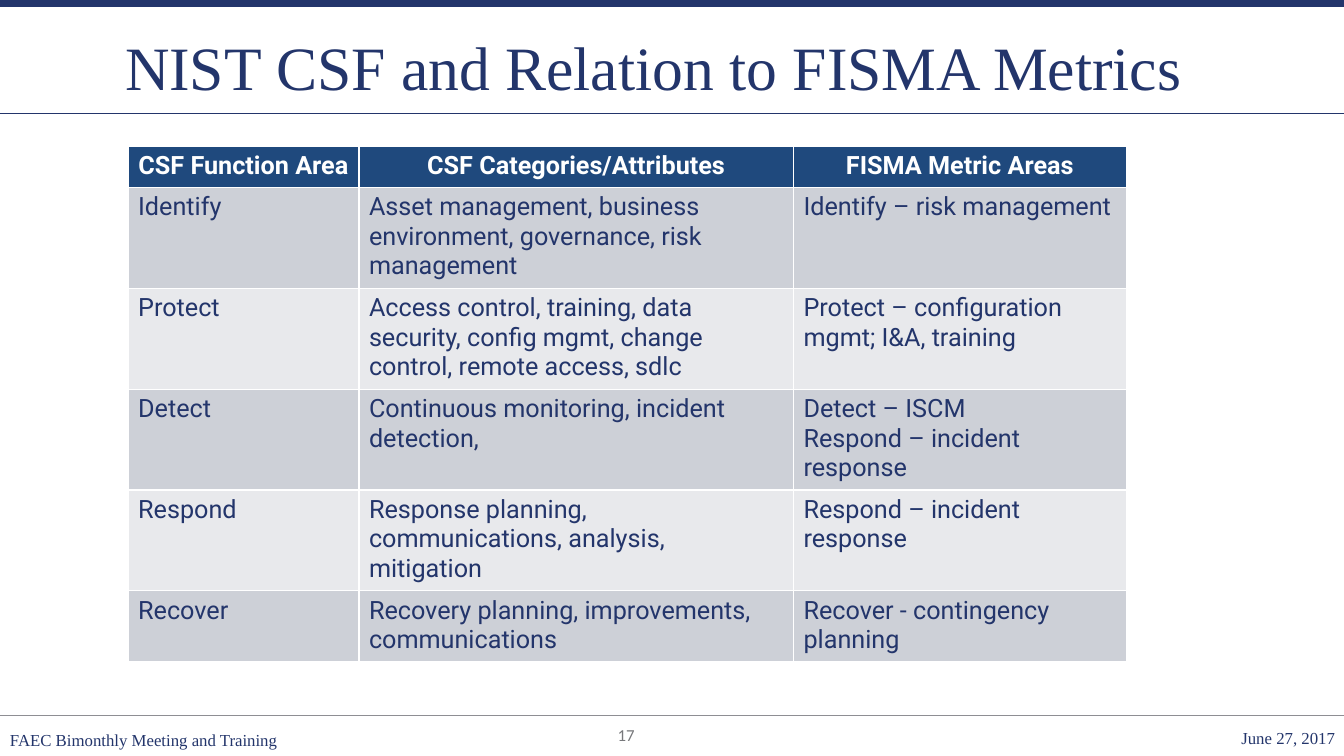
"""Build a slide that maps NIST CSF functions to FISMA metric areas."""
from dataclasses import dataclass

from pptx import Presentation
from pptx import util as u
from pptx.dml.color import RGBColor
from pptx.enum import shapes, text
from pptx.oxml import parse_xml
from pptx.oxml.ns import nsdecls

HUES = {"navy": "23356B", "head": "1F497D", "white": "FFFFFF", "gray": "77787B",
        "rule": "8E8E93", "dark": "CDD0D7", "light": "E8E9EC"}
LEFT, MID, RIGHT = text.PP_ALIGN.LEFT, text.PP_ALIGN.CENTER, text.PP_ALIGN.RIGHT
TOP, CENTER = text.MSO_ANCHOR.TOP, text.MSO_ANCHOR.MIDDLE
WIDE = 13.33


@dataclass
class Font:
    """A text style."""
    face: str
    size: float
    hue: str
    bold: bool = False


@dataclass
class Rule:
    """A line across the whole slide."""
    y: float
    hue: str
    width: float


@dataclass
class Note:
    """A small text in the footer."""
    words: str
    box: tuple[float, float, float, float]
    font: Font
    align: text.PP_ALIGN
    anchor: text.MSO_ANCHOR
    space: float = 0.9


SERIF = Font("Times New Roman", 12, "navy")
TITLE = Font("Times New Roman", 44, "navy")
HEAD = Font("Roboto", 18, "white", True)
BODY = Font("Roboto", 18, "navy")

RULES = [Rule(7.1, "rule", 0.75), Rule(0.03, "navy", 5), Rule(1.13, "navy", 0.75)]
NOTES = [
    Note("17", (5.22, 7.14, 1.98, 0.3), Font("Calibri", 12, "gray"), MID, CENTER, 1),
    Note("FAEC Bimonthly Meeting and Training", (0, 7.14, 3.85, 0.42), SERIF, LEFT, CENTER),
    Note("June 27, 2017", (10.95, 7.19, 2.39, 0.34), SERIF, RIGHT, TOP),
]
COLS = [2.29, 4.31, 3.3]
ROWS = [0.41, 0.98, 0.98, 0.98, 0.98, 0.68]
CELLS = [
    ("CSF Function Area", "CSF Categories/Attributes", "FISMA Metric Areas"),
    ("Identify", "Asset management, business environment, governance, risk management",
     "Identify – risk management"),
    ("Protect", "Access control, training, data security, config mgmt, change control, "
     "remote access, sdlc", "Protect – configuration mgmt; I&A, training"),
    ("Detect", "Continuous monitoring, incident detection,",
     "Detect – ISCM\nRespond – incident response"),
    ("Respond", "Response planning, communications, analysis, mitigation",
     "Respond – incident response"),
    ("Recover", "Recovery planning, improvements, communications",
     "Recover - contingency planning"),
]


def color(hue: str) -> RGBColor:
    """Return the named colour."""
    return RGBColor.from_string(HUES[hue])


def write(frame, words: str, font: Font, align: text.PP_ALIGN, space: float = 1) -> None:
    """Fill a text frame, one paragraph to each line of words."""
    for i, line in enumerate(words.split("\n")):
        para = frame.add_paragraph() if i else frame.paragraphs[0]
        para.alignment, para.line_spacing = align, space
        run = para.add_run()
        run.text = line
        run.font.name, run.font.size = font.face, u.Pt(font.size)
        run.font.bold = font.bold
        run.font.color.rgb = color(font.hue)


def draw_rule(slide, rule: Rule) -> None:
    """Draw a line from edge to edge."""
    y = u.Inches(rule.y)
    line = slide.shapes.add_connector(shapes.MSO_CONNECTOR.STRAIGHT, 0, y, u.Inches(WIDE), y)
    line.line.color.rgb = color(rule.hue)
    line.line.width = u.Pt(rule.width)
    line._element.spPr.append(parse_xml(f"<a:effectLst {nsdecls('a')}/>"))


def draw_note(slide, note: Note) -> None:
    """Add a footer text box."""
    frame = slide.shapes.add_textbox(*map(u.Inches, note.box)).text_frame
    frame.word_wrap = True
    frame.vertical_anchor = note.anchor
    write(frame, note.words, note.font, note.align, note.space)


def draw_title(slide, words: str) -> None:
    """Place and fill the title."""
    title = slide.shapes.title
    title.left, title.top, title.width, title.height = map(u.Inches, (0.38, 0.19, 12.21, 1.01))
    title.text_frame.vertical_anchor = CENTER
    write(title.text_frame, words, TITLE, MID, 0.9)


def draw_table(slide) -> None:
    """Add the table with its header and banded rows."""
    box = map(u.Inches, (1.27, 1.45, sum(COLS), sum(ROWS)))
    table = slide.shapes.add_table(len(ROWS), len(COLS), *box).table
    for col, width in zip(table.columns, COLS):
        col.width = u.Inches(width)
    for r, (row, height) in enumerate(zip(table.rows, ROWS)):
        row.height = u.Inches(height)
        hue = ("dark" if r % 2 else "light") if r else "head"
        for cell, words in zip(row.cells, CELLS[r]):
            cell.fill.solid()
            cell.fill.fore_color.rgb = color(hue)
            write(cell.text_frame, words, BODY if r else HEAD, LEFT if r else MID)


def main() -> None:
    """Build and save the slide."""
    deck = Presentation()
    deck.slide_width, deck.slide_height = u.Inches(WIDE), u.Inches(7.5)
    slide = deck.slides.add_slide(deck.slide_layouts.get_by_name("Title Only"))
    for rule in RULES:
        draw_rule(slide, rule)
    draw_title(slide, "NIST CSF and Relation to FISMA Metrics")
    for note in NOTES:
        draw_note(slide, note)
    draw_table(slide)
    deck.save("out.pptx")


if __name__ == "__main__":
    main()
